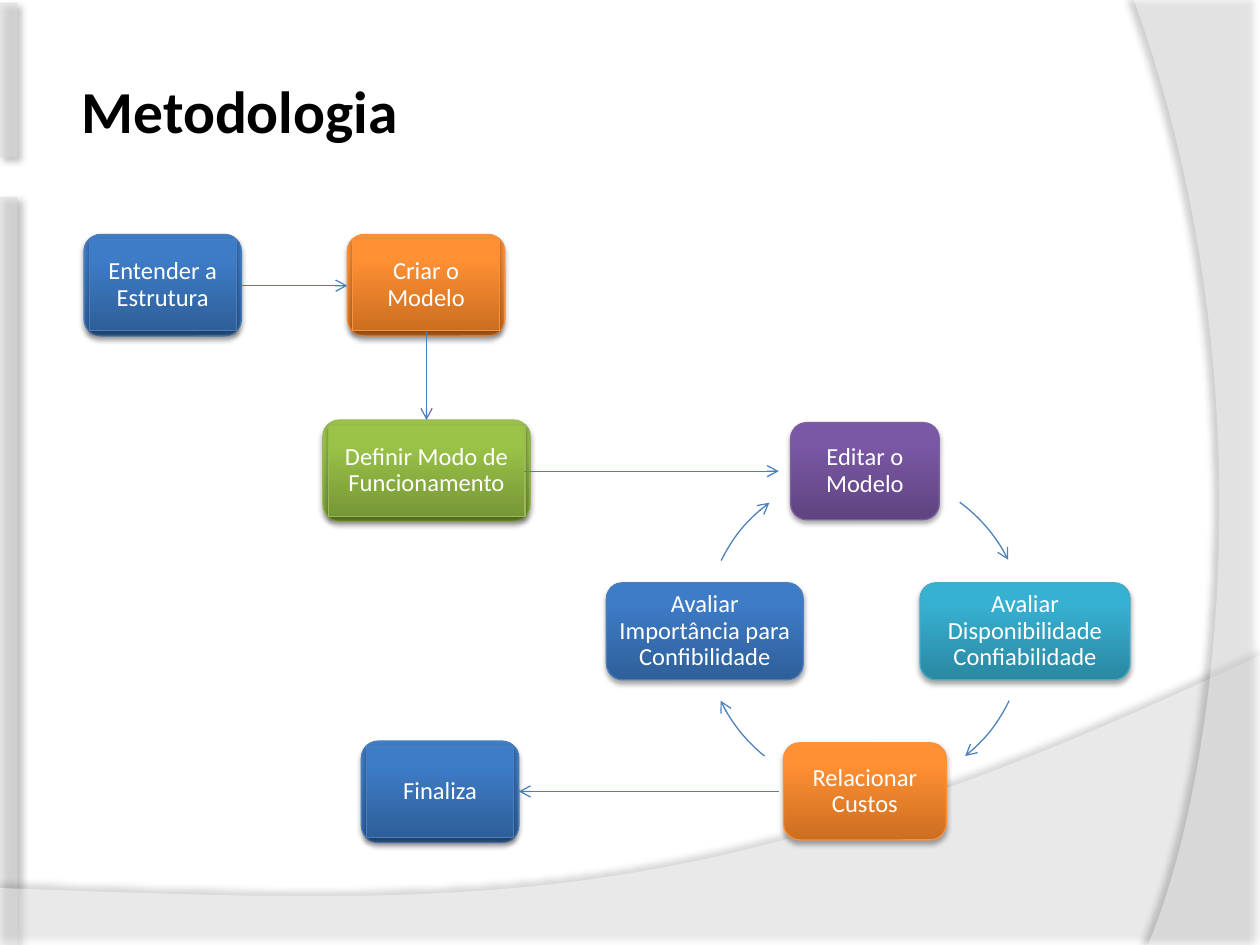
"""Build the Metodologia slide: a process flow that leads into an editing cycle."""
import math

import lxml.etree
import pptx
import pptx.dml.color
import pptx.enum.shapes
import pptx.enum.text
import pptx.oxml
import pptx.oxml.ns
import pptx.util

Pt = pptx.util.Pt
SHAPES = pptx.enum.shapes.MSO_SHAPE
ALIGN = pptx.enum.text.PP_ALIGN
ANCHOR = pptx.enum.text.MSO_ANCHOR

COLORS = {
    "black": "000000", "white": "FFFFFF", "band": "D9D9D9",
    "arrow": "4B7EBC", "cycle arrow": "4F81BD",
}
TONES = {
    "blue": {"dark": "2F5F99", "light": "3D7CC7", "line": "4B7EBC"},
    "orange": {"dark": "CC6E20", "light": "FF9034", "line": "F69240"},
    "green": {"dark": "779737", "light": "9BC348", "line": "98B955"},
    "purple": {"dark": "5F4480", "light": "7B58A6", "line": "7D60A0"},
    "teal": {"dark": "2A88A2", "light": "37B1D2", "line": "46AAC5"},
}
STEP_HEIGHT = 58
PANEL_INSET = 3
STEPS = [
    ("Entender a Estrutura", "blue", 48, 134, 90),
    ("Criar o Modelo", "orange", 198.5, 134, 90),
    ("Definir Modo de Funcionamento", "green", 184.5, 240, 118.5),
    ("Finaliza", "blue", 206.5, 423.5, 90),
]
FLOWS = [
    (138, 163.25, 198.5, 163.25),
    (243.75, 189.5, 243.75, 240),
    (299.5, 269.25, 445, 269.25),
    (445, 452.25, 296.5, 452.25),
]
CYCLE_X, CYCLE_Y, CYCLE_RADIUS, CYCLE_HEIGHT = 494.25, 360.75, 91.5, 55.5
CYCLE = [
    ("Editar o Modelo", "purple", 85, 306.3, 333.5),
    ("Avaliar Disponibilidade Confiabilidade", "teal", 120, 25.7, 51.2),
    ("Relacionar Custos", "orange", 93, 128.8, 154.3),
    ("Avaliar Importância para Confibilidade", "blue", 112.5, 206.2, 233.4),
]


def rgb(value):
    """Turn a hex string into a colour."""
    return pptx.dml.color.RGBColor.from_string(value)


def write(frame, text, size=14, color="white", bold=False, align=ALIGN.CENTER,
          anchor=ANCHOR.MIDDLE, inset=4.5, spacing=0.9):
    """Put one formatted paragraph into a text frame."""
    frame.word_wrap = True
    frame.auto_size = pptx.enum.text.MSO_AUTO_SIZE.NONE
    frame.vertical_anchor = anchor
    frame.margin_left = frame.margin_right = Pt(inset)
    frame.margin_top = frame.margin_bottom = Pt(inset)
    paragraph = frame.paragraphs[0]
    paragraph.alignment = align
    paragraph.line_spacing = spacing
    run = paragraph.add_run()
    run.text = text
    run.font.name = "Calibri"
    run.font.size = Pt(size)
    run.font.bold = bold
    run.font.color.rgb = rgb(COLORS[color])


def cast_shadow(shape, opacity, blur, distance, angle):
    """Give a shape a soft black shadow."""
    shape.shadow.inherit = False
    effects = shape._element.spPr.find(pptx.oxml.ns.qn("a:effectLst"))
    effects.append(pptx.oxml.parse_xml(
        f'<a:outerShdw {pptx.oxml.ns.nsdecls("a")} blurRad="{Pt(blur)}" '
        f'dist="{Pt(distance)}" dir="{angle * 60000}" rotWithShape="0">'
        f'<a:srgbClr val="{COLORS["black"]}"><a:alpha val="{opacity * 1000}"/>'
        '</a:srgbClr></a:outerShdw>'))


def fill_veil(shape, color, opacity):
    """Fill a background shape with a translucent colour and no outline."""
    shape.fill.solid()
    shape.fill.fore_color.rgb = rgb(COLORS[color])
    shape.line.fill.background()
    tint = next(shape._element.spPr.iter(pptx.oxml.ns.qn("a:srgbClr")))
    lxml.etree.SubElement(tint, pptx.oxml.ns.qn("a:alpha"), val=str(opacity * 1000))


def add_side_band(slide, top, height):
    """Draw a grey band at the left edge."""
    band = slide.shapes.add_shape(SHAPES.RECTANGLE, 0, Pt(top), Pt(10), Pt(height))
    fill_veil(band, "band", 60)
    cast_shadow(band, 40, 4, 3, 45)


def bezier(start, first, second, end, pieces=40):
    """List the points of a cubic curve."""
    shares = [piece / pieces for piece in range(pieces + 1)]
    return [tuple((1 - t) ** 3 * a + 3 * (1 - t) ** 2 * t * b
                  + 3 * (1 - t) * t ** 2 * c + t ** 3 * d
                  for a, b, c, d in zip(start, first, second, end))
            for t in shares]


def add_sweep(slide, outline, opacity, shadow):
    """Draw a translucent curved area of the background."""
    points = [(Pt(x), Pt(y)) for x, y in outline]
    builder = slide.shapes.build_freeform(*points[0])
    builder.add_line_segments(points[1:], close=True)
    sweep = builder.convert_to_shape()
    fill_veil(sweep, "white", opacity)
    cast_shadow(sweep, *shadow)


def add_block(slide, geometry, tone, left, top, width, height):
    """Draw a shaded block with a thin outline."""
    block = slide.shapes.add_shape(geometry, Pt(left), Pt(top), Pt(width), Pt(height))
    block.fill.gradient()
    block.fill.gradient_angle = 90
    dark, light = block.fill.gradient_stops
    dark.color.rgb, light.color.rgb = rgb(TONES[tone]["dark"]), rgb(TONES[tone]["light"])
    dark.position, light.position = 0, 0.8
    block.line.color.rgb = rgb(TONES[tone]["line"])
    block.line.width = Pt(0.75)
    cast_shadow(block, 35, 3.1, 1.8, 90)
    return block


def add_step(slide, text, tone, left, top, width):
    """Draw a process step with a raised inner panel."""
    add_block(slide, SHAPES.ROUNDED_RECTANGLE, tone, left, top, width, STEP_HEIGHT)
    panel = add_block(slide, SHAPES.RECTANGLE, tone, left + PANEL_INSET, top + PANEL_INSET,
                      width - 2 * PANEL_INSET, STEP_HEIGHT - 2 * PANEL_INSET)
    write(panel.text_frame, text)


def add_stage(slide, index, text, tone, width):
    """Draw a cycle stage at its quarter of the circle."""
    angle = math.radians(90 * index - 90)
    left = CYCLE_X + CYCLE_RADIUS * math.cos(angle) - width / 2
    top = CYCLE_Y + CYCLE_RADIUS * math.sin(angle) - CYCLE_HEIGHT / 2
    stage = add_block(slide, SHAPES.ROUNDED_RECTANGLE, tone, left, top, width, CYCLE_HEIGHT)
    write(stage.text_frame, text, inset=3)


def point_line(line, color):
    """Format a line with an open arrowhead at its end."""
    line.color.rgb = rgb(COLORS[color])
    line.width = Pt(0.75)
    lxml.etree.SubElement(line._get_or_add_ln(), pptx.oxml.ns.qn("a:tailEnd"), type="arrow")


def add_flow(slide, *ends):
    """Draw a straight arrow between steps."""
    flow = slide.shapes.add_connector(pptx.enum.shapes.MSO_CONNECTOR.STRAIGHT, *map(Pt, ends))
    point_line(flow.line, "arrow")
    lxml.etree.SubElement(flow._element.spPr, pptx.oxml.ns.qn("a:effectLst"))


def add_turn(slide, start, end):
    """Draw an arrow along the cycle between two angles in degrees."""
    turn = slide.shapes.add_shape(
        SHAPES.ARC, Pt(CYCLE_X - CYCLE_RADIUS), Pt(CYCLE_Y - CYCLE_RADIUS),
        Pt(2 * CYCLE_RADIUS), Pt(2 * CYCLE_RADIUS))
    turn.adjustments[0], turn.adjustments[1] = start * 0.6, end * 0.6
    turn.fill.background()
    turn.shadow.inherit = False
    point_line(turn.line, "cycle arrow")


def add_title(slide, text):
    """Place the title in front of the background."""
    title = slide.shapes.title
    title.left, title.top, title.width, title.height = Pt(39.5), Pt(15), Pt(654), Pt(72)
    write(title.text_frame, text, size=34, color="black", bold=True, align=ALIGN.LEFT,
          anchor=ANCHOR.BOTTOM, inset=7.2, spacing=1)
    title.text_frame.margin_bottom = Pt(3.6)
    slide.shapes._spTree.append(title._element)


def main():
    """Build and save the slide."""
    deck = pptx.Presentation()
    deck.slide_width, deck.slide_height = Pt(720), Pt(540)
    slide = deck.slides.add_slide(deck.slide_layouts[5])
    add_side_band(slide, 112.5, 427.5)
    add_side_band(slide, 1.5, 88.5)
    ground = bezier((720, 374.5), (402.5, 525), (281.5, 517.5), (0, 507.5))
    add_sweep(slide, [(0, 540), (720, 540)] + ground, 45, (35, 4, 3.5, 270))
    edge = bezier((656, 540), (696, 445.5), (726.5, 216), (648, 0))
    add_sweep(slide, [(720, 0), (720, 540)] + edge, 40, (45, 4, 4, 180))
    add_title(slide, "Metodologia")
    for index, (text, tone, width, start, end) in enumerate(CYCLE):
        add_stage(slide, index, text, tone, width)
        add_turn(slide, start, end)
    for step in STEPS:
        add_step(slide, *step)
    for flow in FLOWS:
        add_flow(slide, *flow)
    deck.save("out.pptx")


if __name__ == "__main__":
    main()
